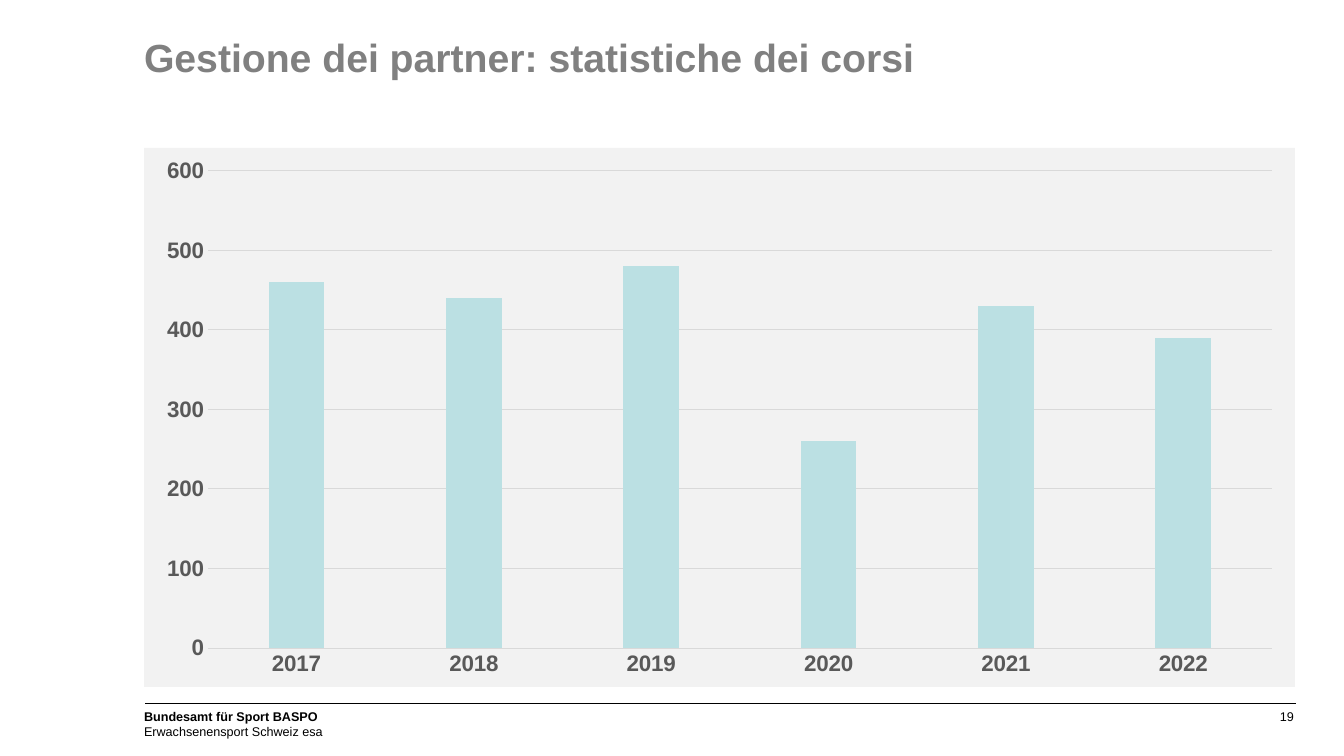
from dataclasses import dataclass

from lxml import etree
from pptx import Presentation
from pptx.chart.data import CategoryChartData
from pptx.dml.color import RGBColor
from pptx.enum.chart import XL_CHART_TYPE, XL_TICK_MARK
from pptx.enum.shapes import MSO_CONNECTOR
from pptx.enum.text import PP_ALIGN
from pptx.oxml import parse_xml
from pptx.oxml.ns import nsdecls, qn
from pptx.util import Pt

COLUMNS = XL_CHART_TYPE.COLUMN_CLUSTERED
NO_TICK = XL_TICK_MARK.NONE
STRAIGHT = MSO_CONNECTOR.STRAIGHT
LEFT, RIGHT = PP_ALIGN.LEFT, PP_ALIGN.RIGHT

HEADING = "Gestione dei partner: statistiche dei corsi"
OFFICE = "Bundesamt für Sport BASPO"
PROGRAMME = "Erwachsenensport Schweiz esa"
PAGE_NUMBER = "19"
COURSES = {"2017": 460, "2018": 440, "2019": 480,
           "2020": 260, "2021": 430, "2022": 390}

PX = 914400 / 100.8
SLIDE_W, SLIDE_H = 1344, 756
MARGIN, CONTENT_W = 144, 1151
HEADING_BOX = (MARGIN, 28, CONTENT_W, 115)
CHART_BOX = (MARGIN, 148, CONTENT_W, 539)
RULE = (1296, 704, 145, 704)
OFFICE_BOX = (MARGIN, 704, 565, 40)
PAGE_BOX = (970, 709, 324, 16)


@dataclass(frozen=True)
class Theme:
    font: str = "Arial"
    heading: str = "808080"
    ink: str = "000000"
    axis: str = "595959"
    grid: str = "D9D9D9"
    panel: str = "F2F2F2"
    bar: str = "BBE0E3"
    heading_size: int = 28
    axis_size: int = 16
    footer_size: int = 9
    line_width: float = 0.75


THEME = Theme()


def emu(lengths):
    return [round(length * PX) for length in lengths]


def style_font(font, size, color, bold):
    font.name = THEME.font
    font.size = Pt(size)
    font.bold = bold
    font.color.rgb = RGBColor.from_string(color)


def style_line(line, color):
    line.color.rgb = RGBColor.from_string(color)
    line.width = Pt(THEME.line_width)


def add_text(slide, box, lines, size, color, inset=0, align=LEFT):
    frame = slide.shapes.add_textbox(*emu(box)).text_frame
    frame.word_wrap = True
    frame.margin_left = frame.margin_right = 0
    frame.margin_top = frame.margin_bottom = round(inset * PX)
    frame.text = "\n".join(text for text, bold in lines)
    for paragraph, (text, bold) in zip(frame.paragraphs, lines):
        paragraph.alignment = align
        style_font(paragraph.runs[0].font, size, color, bold)


def add_rule(slide):
    rule = slide.shapes.add_connector(STRAIGHT, *emu(RULE))
    style_line(rule.line, THEME.ink)
    etree.SubElement(rule.line._get_or_add_ln().getparent(), qn("a:effectLst"))


def add_course_chart(slide):
    data = CategoryChartData()
    data.categories = list(COURSES)
    data.add_series("Series 1", list(COURSES.values()))
    chart = slide.shapes.add_chart(COLUMNS, *emu(CHART_BOX), data).chart
    chart.has_legend = False
    chart.has_title = False
    style_font(chart.font, THEME.axis_size, THEME.axis, True)

    years, counts = chart.category_axis, chart.value_axis
    for axis in (years, counts):
        axis.major_tick_mark = axis.minor_tick_mark = NO_TICK
        style_font(axis.tick_labels.font, THEME.axis_size, THEME.axis, True)
    style_line(years.format.line, THEME.grid)
    counts.format.line.fill.background()
    counts.minimum_scale, counts.maximum_scale, counts.major_unit = 0, 600, 100
    style_line(counts.major_gridlines.format.line, THEME.grid)

    plot = chart.plots[0]
    plot.gap_width, plot.overlap = 219, -27
    plot.vary_by_categories = False
    fill = plot.series[0].format.fill
    fill.solid()
    fill.fore_color.rgb = RGBColor.from_string(THEME.bar)

    panel = parse_xml(
        f'<c:spPr {nsdecls("c", "a")}><a:solidFill><a:srgbClr val="{THEME.panel}"/>'
        '</a:solidFill><a:ln><a:noFill/></a:ln></c:spPr>')
    chart._chartSpace.find(qn("c:chart")).addnext(panel)


def main():
    deck = Presentation()
    deck.slide_width, deck.slide_height = emu((SLIDE_W, SLIDE_H))
    slide = deck.slides.add_slide(deck.slide_layouts[6])
    add_text(slide, PAGE_BOX, [(PAGE_NUMBER, False)],
             THEME.footer_size, THEME.ink, align=RIGHT)
    add_rule(slide)
    add_text(slide, OFFICE_BOX, [(OFFICE, True), (PROGRAMME, False)],
             THEME.footer_size, THEME.ink, inset=5)
    add_text(slide, HEADING_BOX, [(HEADING, True)],
             THEME.heading_size, THEME.heading, inset=5)
    add_course_chart(slide)
    deck.save("out.pptx")


if __name__ == "__main__":
    main()
